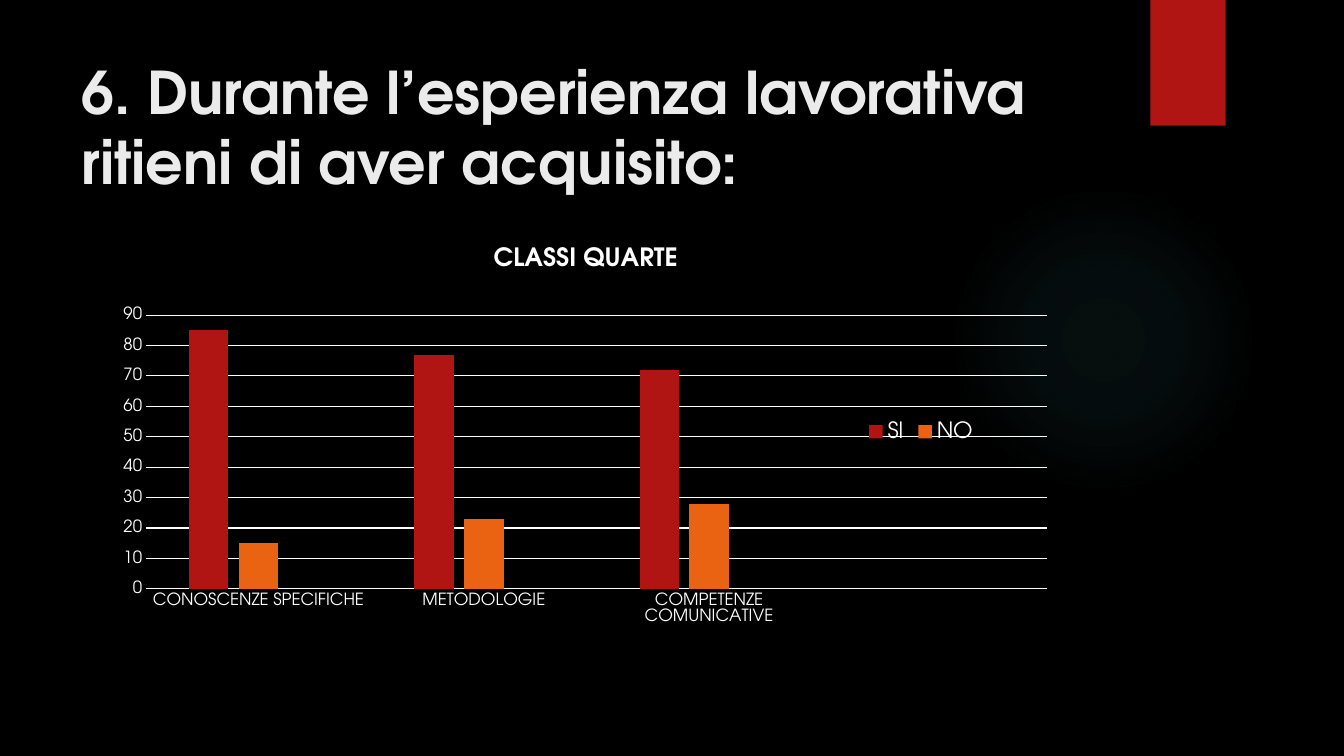
from lxml import etree
from pptx import Presentation
from pptx.chart.data import CategoryChartData
from pptx.dml.color import RGBColor
from pptx.enum.chart import XL_CHART_TYPE as CT, XL_LEGEND_POSITION as LP, XL_TICK_MARK as TM
from pptx.enum.shapes import MSO_SHAPE as SHAPE
from pptx.enum.text import MSO_ANCHOR as ANCHOR
from pptx.oxml import parse_xml
from pptx.oxml.ns import nsdecls, qn
from pptx.util import Cm, Pt

FONT = "TeX Gyre Adventor"
BLACK = RGBColor(0x00, 0x00, 0x00)
WHITE = RGBColor(0xFF, 0xFF, 0xFF)
PALE = RGBColor(0xEB, 0xEB, 0xEB)
RED = RGBColor(0xB0, 0x15, 0x13)
ORANGE = RGBColor(0xEA, 0x63, 0x12)
YELLOW = RGBColor(0xE6, 0xB7, 0x29)
TEAL = RGBColor(0x50, 0xB9, 0xC1)

CATEGORIES = ["CONOSCENZE SPECIFICHE", "METODOLOGIE", "COMPETENZE COMUNICATIVE", ""]
SERIES = [
    ("SI", (85, 77, 72, None), RED),
    ("NO", (15, 23, 28, None), ORANGE),
    ("Series 3", (None,) * 4, YELLOW),
]


def set_font(font, size, color=WHITE, bold=False):
    font.name, font.size, font.bold = FONT, Pt(size), bold
    font.color.rgb = color


def add_plain(slide, kind, box):
    sp = slide.shapes.add_shape(kind, *box)
    sp.shadow.inherit = False
    sp.line.fill.background()
    return sp


def add_glow(slide, box):
    sp = add_plain(slide, SHAPE.OVAL, box)
    stops = "".join(
        f'<a:gs pos="{pos * 1000}"><a:srgbClr val="{TEAL}">'
        f'<a:alpha val="{alpha * 1000}"/></a:srgbClr></a:gs>'
        for pos, alpha in ((0, 7), (36, 6), (69, 0), (100, 0)))
    grad = parse_xml(
        f'<a:gradFill {nsdecls("a")}><a:gsLst>{stops}</a:gsLst><a:path path="circle">'
        '<a:fillToRect l="50000" t="50000" r="50000" b="50000"/></a:path></a:gradFill>')
    sp._element.spPr.find(qn("a:prstGeom")).addnext(grad)


def add_ribbon(slide, box):
    sp = add_plain(slide, SHAPE.RECTANGLE, box)
    sp.fill.solid()
    sp.fill.fore_color.rgb = RED


def add_title(slide, box, text):
    tf = slide.shapes.add_textbox(*box).text_frame
    tf.word_wrap = True
    tf.vertical_anchor = ANCHOR.TOP
    p = tf.paragraphs[0]
    p.text = text
    set_font(p.runs[0].font, 42, PALE, True)


def make_layout(x, y, w, h, inner=False):
    layout = etree.Element(qn("c:layout"))
    manual = etree.SubElement(layout, qn("c:manualLayout"))
    settings = [("layoutTarget", "inner")] if inner else []
    settings += [("xMode", "edge"), ("yMode", "edge"), ("x", x), ("y", y), ("w", w), ("h", h)]
    for name, value in settings:
        etree.SubElement(manual, qn(f"c:{name}")).set("val", str(value))
    return layout


def drop_layout(parent):
    for old in parent.findall(qn("c:layout")):
        parent.remove(old)


def style_axis(axis):
    axis.major_tick_mark = axis.minor_tick_mark = TM.NONE
    set_font(axis.tick_labels.font, 12)


def style_legend(chart):
    chart.has_legend = True
    legend = chart.legend
    legend.position = LP.BOTTOM
    legend.include_in_layout = False
    set_font(legend.font, 16)
    el = legend._element
    drop_layout(el)
    entry = etree.Element(qn("c:legendEntry"))
    etree.SubElement(entry, qn("c:idx")).set("val", "2")
    etree.SubElement(entry, qn("c:delete")).set("val", "1")
    el.find(qn("c:legendPos")).addnext(entry)
    entry.addnext(make_layout(0.78, 0.4, 0.12, 0.09))


def add_answers_chart(slide, box):
    data = CategoryChartData()
    data.categories = CATEGORIES
    for name, values, _ in SERIES:
        data.add_series(name, values)
    chart = slide.shapes.add_chart(CT.COLUMN_CLUSTERED, *box, data).chart
    set_font(chart.font, 10)

    chart.has_title = True
    tf = chart.chart_title.text_frame
    tf.text = "CLASSI QUARTE"
    set_font(tf.paragraphs[0].runs[0].font, 18, bold=True)

    plot = chart.plots[0]
    plot.gap_width, plot.overlap = 219, -27
    plot.vary_by_categories = False
    for series, (_, _, color) in zip(plot.series, SERIES):
        series.format.fill.solid()
        series.format.fill.fore_color.rgb = color

    cat, val = chart.category_axis, chart.value_axis
    style_axis(cat)
    style_axis(val)
    val.minimum_scale, val.maximum_scale, val.major_unit = 0, 90, 10
    val.has_major_gridlines = True
    val.format.line.fill.background()
    for line in (cat.format.line, val.major_gridlines.format.line):
        line.color.rgb = WHITE
        line.width = Pt(0.75)

    style_legend(chart)
    area = chart._chartSpace.chart.plotArea
    drop_layout(area)
    area.insert(0, make_layout(0.054, 0.193, 0.914, 0.592, inner=True))


def build_survey_slide(prs):
    slide = prs.slides.add_slide(prs.slide_layouts[6])
    slide.background.fill.solid()
    slide.background.fill.fore_color.rgb = BLACK
    add_glow(slide, (Cm(23.9), Cm(4.65), Cm(7.82), Cm(7.82)))
    add_ribbon(slide, (Cm(28.99), Cm(0), Cm(1.9), Cm(3.17)))
    add_title(slide, (Cm(1.8), Cm(1.27), Cm(26.14), Cm(3.89)),
              "6. Durante l’esperienza lavorativa ritieni di aver acquisito:")
    add_answers_chart(slide, (Cm(2.34), Cm(5.69), Cm(24.84), Cm(11.66)))


def main():
    prs = Presentation()
    prs.slide_width, prs.slide_height = Cm(33.87), Cm(19.05)
    build_survey_slide(prs)
    prs.save("out.pptx")


if __name__ == "__main__":
    main()
